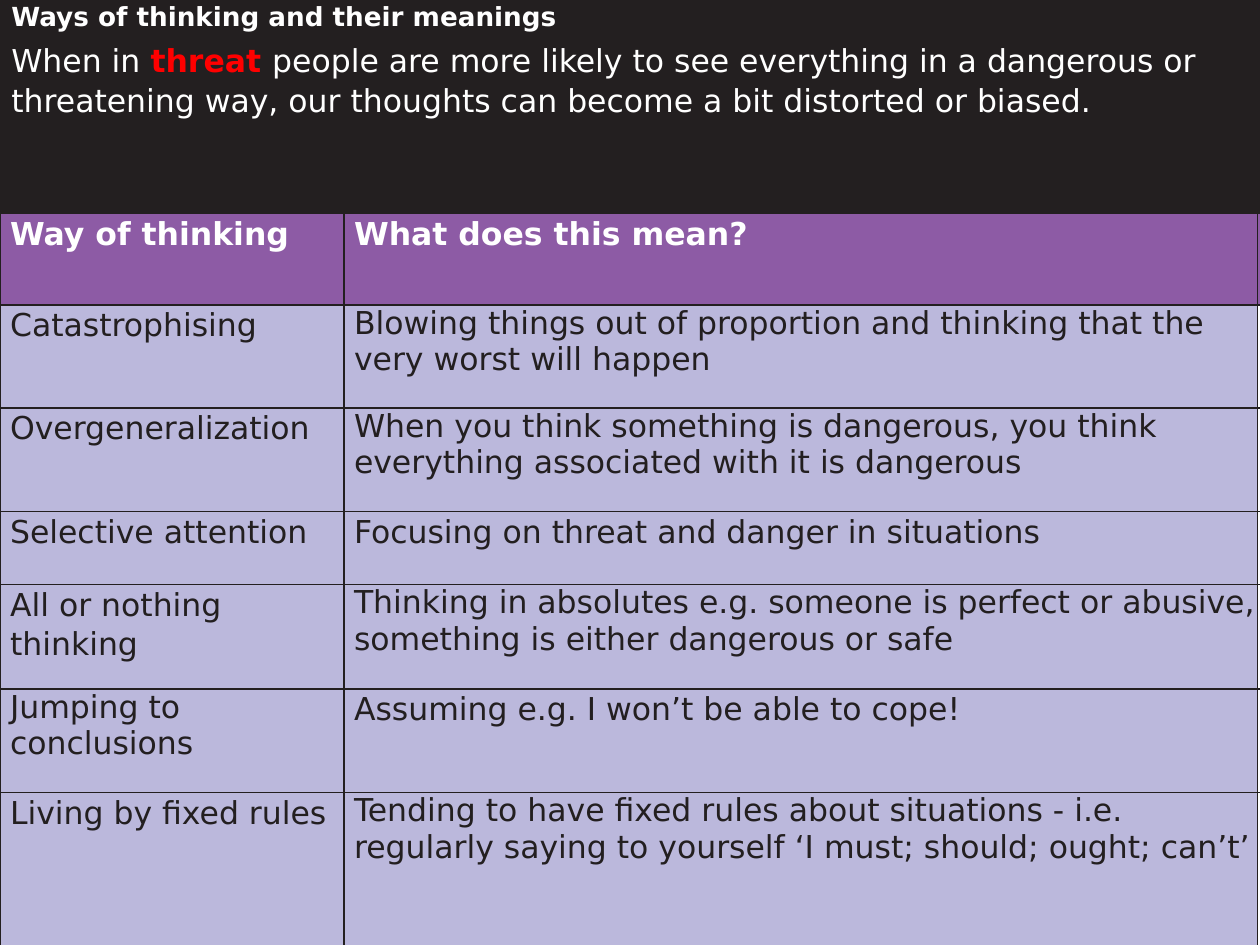
"""Build a slide with a table of ways of thinking and their meanings."""
from lxml import etree
from pptx import Presentation
from pptx.dml.color import RGBColor
from pptx.oxml.ns import qn
from pptx.util import Inches, Pt

FONT = "DejaVu Sans"
COLORS = {
    "dark": "231F20",
    "purple": "8D5BA5",
    "lilac": "BBB8DC",
    "white": "FFFFFF",
    "red": "FF0000",
}
LOOSE, SINGLE = 1.07, 1.0

TITLE = "Ways of thinking and their meanings"
INTRO = [
    ("When in ", "white", False),
    ("threat ", "red", True),
    ("people are more likely to see everything in a dangerous or threatening way, "
     "our thoughts can become a bit distorted or biased.", "white", False),
]
HEADERS = ["Way of thinking", "What does this mean?"]
MEANINGS = [
    (("Catastrophising", LOOSE),
     ("Blowing things out of proportion and thinking that the very worst will happen", SINGLE)),
    (("Overgeneralization", LOOSE),
     ("When you think something is dangerous, you think everything associated with it "
      "is dangerous", SINGLE)),
    (("Selective attention", LOOSE),
     ("Focusing on threat and danger in situations", LOOSE)),
    (("All or nothing thinking", LOOSE),
     ("Thinking in absolutes e.g. someone is perfect or abusive, something is either "
      "dangerous or safe", SINGLE)),
    (("Jumping to conclusions", SINGLE),
     ("Assuming e.g. I won’t be able to cope!", LOOSE)),
    (("Living by fixed rules", LOOSE),
     ("Tending to have fixed rules about situations - i.e. regularly saying to yourself "
      "‘I must; should; ought; can’t’", SINGLE)),
]
COLUMN_WIDTHS = [2.73, 7.25, 0.03]
ROW_HEIGHTS = [1.7, 0.72, 0.82, 0.82, 0.58, 0.83, 0.82, 1.22]


def write_paragraph(paragraph, runs, size=18, indent=0.08, before=2.6, spacing=LOOSE):
    paragraph._p.get_or_add_pPr().set("marL", str(Inches(indent)))
    paragraph.space_before = Pt(before)
    paragraph.line_spacing = spacing
    for text, color, bold in runs:
        run = paragraph.add_run()
        run.text = text
        run.font.name = FONT
        run.font.size = Pt(size)
        run.font.bold = bold
        run.font.color.rgb = RGBColor.from_string(COLORS[color])


def format_cell(cell, fill=None, borders="LRTB"):
    cell.margin_left = cell.margin_right = cell.margin_top = cell.margin_bottom = 0
    properties = cell._tc.get_or_add_tcPr()
    for side in "LRTB":
        line = etree.SubElement(properties, qn(f"a:ln{side}"), w=str(Pt(1)))
        if side in borders:
            solid = etree.SubElement(line, qn("a:solidFill"))
            etree.SubElement(solid, qn("a:srgbClr"), val=COLORS["dark"])
        else:
            etree.SubElement(line, qn("a:noFill"))
    if fill:
        cell.fill.solid()
        cell.fill.fore_color.rgb = RGBColor.from_string(COLORS[fill])
    else:
        cell.fill.background()


def fill_table(table):
    for column, width in zip(table.columns, COLUMN_WIDTHS):
        column.width = Inches(width)
    for row, height in zip(table.rows, ROW_HEIGHTS):
        row.height = Inches(height)
    last = len(COLUMN_WIDTHS) - 1

    for column in range(len(COLUMN_WIDTHS)):
        format_cell(table.cell(0, column), "dark", borders="")
        format_cell(table.cell(1, column), "purple", borders="LRB")
        for row in range(2, len(ROW_HEIGHTS)):
            format_cell(table.cell(row, column), "lilac" if column < last else None)

    intro_cell = table.cell(0, 0)
    intro_cell.merge(table.cell(0, last))
    frame = intro_cell.text_frame
    write_paragraph(frame.paragraphs[0], [(TITLE, "white", True)],
                    size=15, indent=0.09, before=5)
    write_paragraph(frame.add_paragraph(), INTRO, indent=0.09, before=5)

    for column, header in enumerate(HEADERS):
        write_paragraph(table.cell(1, column).text_frame.paragraphs[0],
                        [(header, "white", True)], before=3.4)
    for row, entries in enumerate(MEANINGS, start=2):
        for column, (text, spacing) in enumerate(entries):
            write_paragraph(table.cell(row, column).text_frame.paragraphs[0],
                            [(text, "dark", False)], spacing=spacing)


def main():
    presentation = Presentation()
    presentation.slide_width, presentation.slide_height = Inches(10), Inches(7.5)
    slide = presentation.slides.add_slide(presentation.slide_layouts[6])
    table = slide.shapes.add_table(
        len(ROW_HEIGHTS), len(COLUMN_WIDTHS), 0, 0,
        Inches(sum(COLUMN_WIDTHS)), Inches(sum(ROW_HEIGHTS))).table
    table.first_row = table.horz_banding = False
    fill_table(table)
    presentation.save("out.pptx")


if __name__ == "__main__":
    main()
